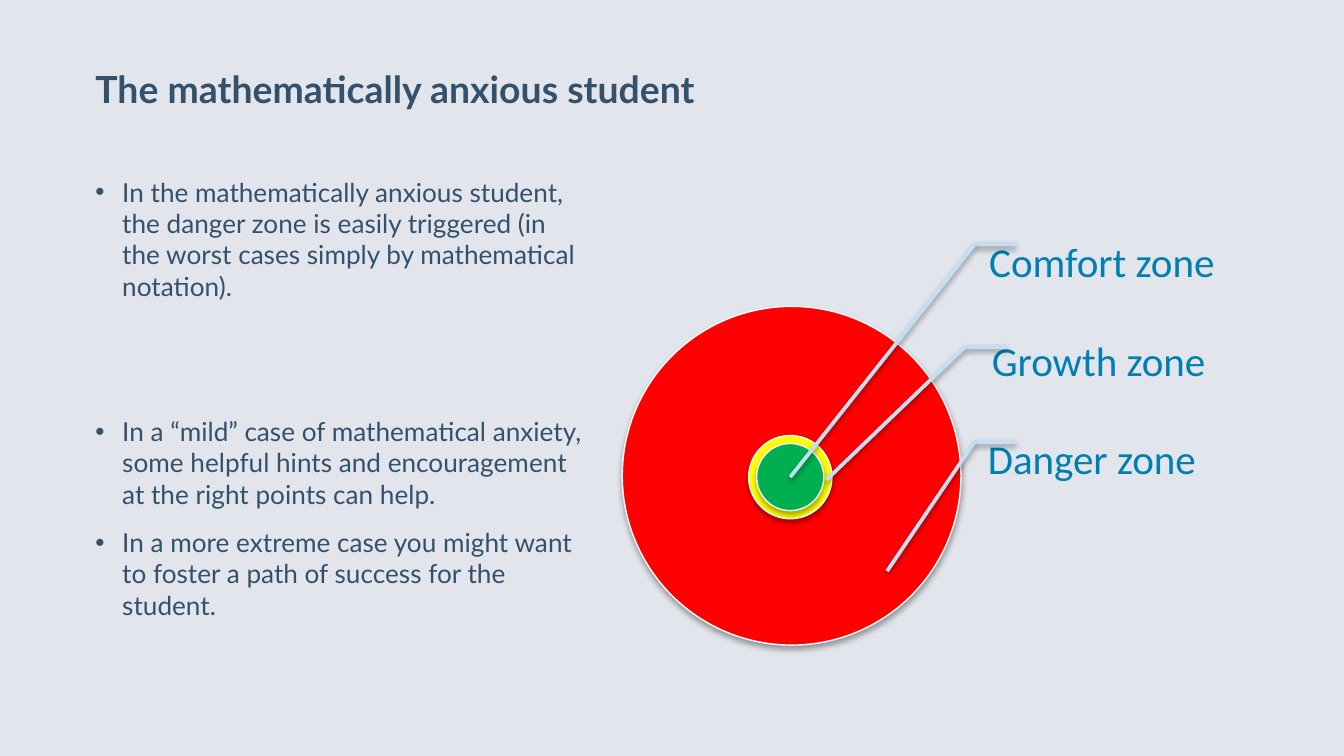
from lxml import etree
from pptx import Presentation
from pptx.dml.color import RGBColor
from pptx.enum.shapes import MSO_CONNECTOR, MSO_SHAPE
from pptx.enum.text import MSO_ANCHOR, MSO_AUTO_SIZE, PP_ALIGN
from pptx.oxml.ns import qn
from pptx.util import Inches, Pt

OVAL = MSO_SHAPE.OVAL
STRAIGHT = MSO_CONNECTOR.STRAIGHT
TOP, MIDDLE, BOTTOM = MSO_ANCHOR.TOP, MSO_ANCHOR.MIDDLE, MSO_ANCHOR.BOTTOM
NO_AUTOFIT = MSO_AUTO_SIZE.NONE
LEFT = PP_ALIGN.LEFT

BACKGROUND = RGBColor(0xE3, 0xE5, 0xED)
SLATE = RGBColor(0x34, 0x51, 0x6C)
LABEL_BLUE = RGBColor(0x00, 0x7F, 0xB0)
LEADER_BLUE = RGBColor(0xC3, 0xDF, 0xF4)
OUTLINE = RGBColor(0xFE, 0xFF, 0xFF)
RED = RGBColor(0xFF, 0x00, 0x00)
YELLOW = RGBColor(0xFF, 0xFF, 0x00)
GREEN = RGBColor(0x00, 0xB0, 0x50)


def write(box, paragraphs, size, color, font="Lato", bold=False, anchor=TOP,
          insets=(0, 0, 0, 0), line_spacing=1.0, bullet=None):
    """Fill a box with (text, space before in points) paragraphs."""
    frame = box.text_frame
    frame.word_wrap = True
    frame.auto_size = NO_AUTOFIT
    frame.vertical_anchor = anchor
    (frame.margin_left, frame.margin_top,
     frame.margin_right, frame.margin_bottom) = [Inches(inset) for inset in insets]
    for index, (text, space_before) in enumerate(paragraphs):
        para = frame.add_paragraph() if index else frame.paragraphs[0]
        para.alignment = LEFT
        para.line_spacing = line_spacing
        para.space_before = Pt(space_before)
        if bullet:
            properties = para._p.get_or_add_pPr()
            properties.set("marL", str(Inches(0.2)))
            properties.set("indent", str(Inches(-0.2)))
            etree.SubElement(properties, qn("a:buFont"), typeface="Arial")
            etree.SubElement(properties, qn("a:buChar"), char=bullet)
        span = para.add_run()
        span.text = text
        span.font.name = font
        span.font.size = Pt(size)
        span.font.bold = bold
        span.font.color.rgb = color


def add_shadow(shape, opacity, distance):
    """Cast a soft shadow straight down; opacity in percent, distance in points."""
    effects = etree.SubElement(shape._element.spPr, qn("a:effectLst"))
    shadow = etree.SubElement(effects, qn("a:outerShdw"), blurRad=str(Pt(3.1)),
                              dist=str(Pt(distance)), dir="5400000", rotWithShape="0")
    black = etree.SubElement(shadow, qn("a:srgbClr"), val="000000")
    etree.SubElement(black, qn("a:alpha"), val=str(opacity * 1000))


deck = Presentation()
deck.slide_width = Inches(10)
deck.slide_height = Inches(10) * 9 // 16
page = deck.slides.add_slide(deck.slide_layouts[5])
page.background.fill.solid()
page.background.fill.fore_color.rgb = BACKGROUND

title = page.shapes.title
title.left, title.top = Inches(0.71), Inches(0.13)
title.width, title.height = Inches(6.98), Inches(0.7)
write(title, [("The mathematically anxious student", 0)], 20, SLATE,
      bold=True, anchor=BOTTOM, line_spacing=0.9)

body = page.shapes.add_textbox(Inches(0.71), Inches(1.31), Inches(3.64), Inches(3.71))
write(body, [
    ("In the mathematically anxious student, the danger zone is easily triggered "
     "(in the worst cases simply by mathematical notation).", 0),
    ("In a “mild” case of mathematical anxiety, some helpful hints and "
     "encouragement at the right points can help.", 61),
    ("In a more extreme case you might want to foster a path of success "
     "for the student.", 9),
], 14, SLATE, bullet="•")

# Concentric zones, outermost first: left, top, diameter, colour
for left, top, diameter, color in [
    (4.63, 2.28, 2.52, RED),
    (5.57, 3.24, 0.62, YELLOW),
    (5.63, 3.3, 0.5, GREEN),
]:
    zone = page.shapes.add_shape(OVAL, Inches(left), Inches(top),
                                 Inches(diameter), Inches(diameter))
    zone.fill.solid()
    zone.fill.fore_color.rgb = color
    zone.line.color.rgb = OUTLINE
    zone.line.width = Pt(0.75)
    add_shadow(zone, 35, 1.8)

# Labels with their leader lines: text, left, width, elbow, target in the zone
LABEL_TOP, LABEL_STEP, LABEL_HEIGHT, TICK = 1.6, 0.73, 0.74, 0.31
for row, (text, left, width, elbow, target) in enumerate([
    ("Comfort zone", 7.19, 2, (7.25, 1.82), (5.88, 3.55)),
    ("Growth zone", 7.21, 1.96, (7.18, 2.58), (6.15, 3.57)),
    ("Danger zone", 7.18, 1.98, (7.25, 3.29), (6.6, 4.25)),
]):
    label = page.shapes.add_textbox(Inches(left), Inches(LABEL_TOP + row * LABEL_STEP),
                                    Inches(width), Inches(LABEL_HEIGHT))
    write(label, [(text, 0)], 22, LABEL_BLUE, font="Calibri", anchor=MIDDLE,
          insets=(0.17, 0.03, 0.03, 0.03), line_spacing=0.9)
    elbow_x, elbow_y = elbow
    for end_x, end_y in [(elbow_x + TICK, elbow_y), target]:
        leader = page.shapes.add_connector(STRAIGHT, Inches(elbow_x), Inches(elbow_y),
                                           Inches(end_x), Inches(end_y))
        leader.line.color.rgb = LEADER_BLUE
        leader.line.width = Pt(2)
        add_shadow(leader, 38, 1.6)

deck.save("out.pptx")
